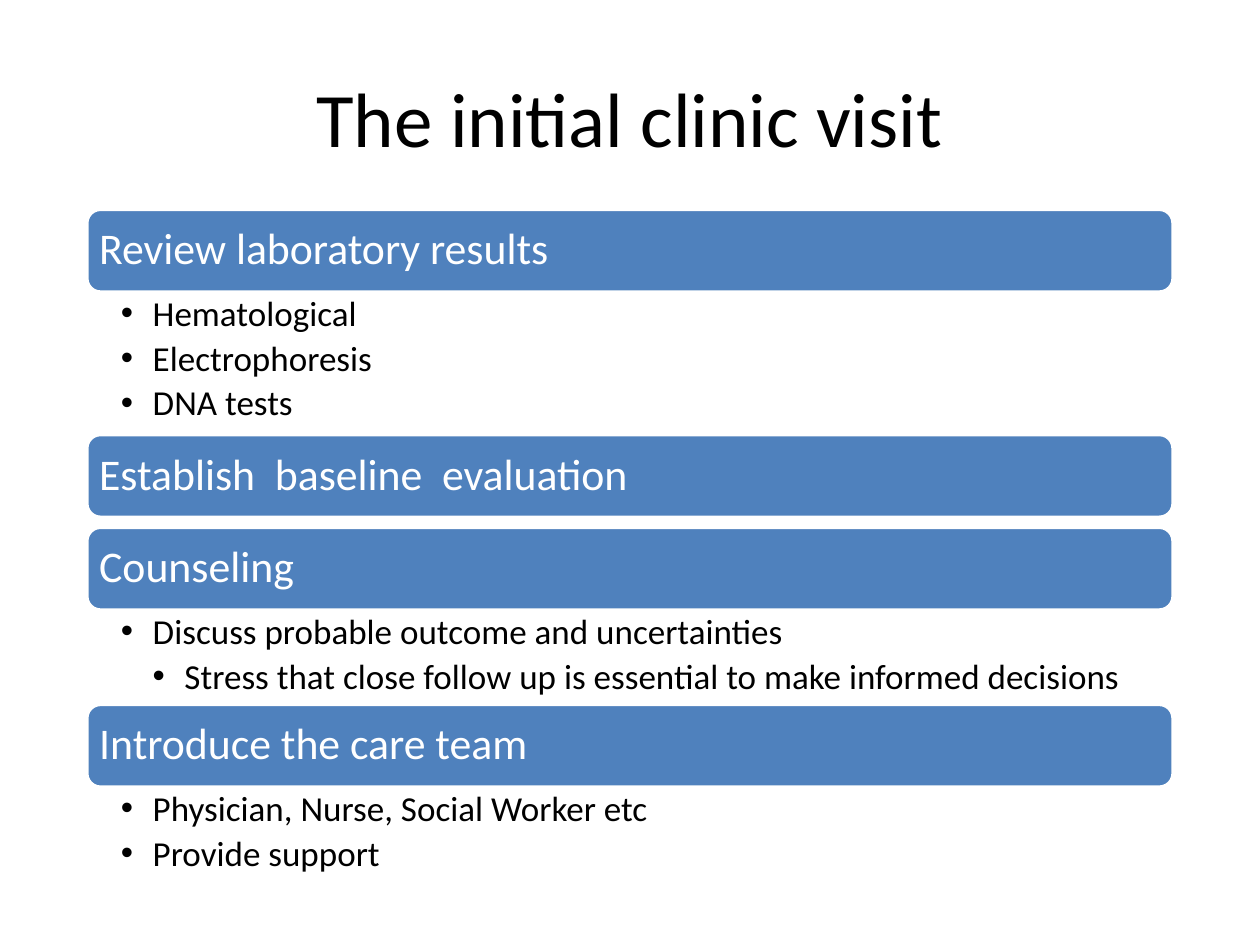
from lxml import etree
from pptx import Presentation
from pptx.dml import color
from pptx.enum import shapes, text
from pptx.oxml import ns
from pptx.util import Cm, Pt

COLORS = {"bar": "4F81BD", "white": "FFFFFF", "black": "000000"}
FONT = "Calibri"
LEFT, TOP, WIDTH = 1.75, 4.22, 21.9
BAR_HEIGHT, BAR_GAP = 1.67, 0.2
BULLET_HEIGHTS = {2: 1.9, 3: 2.87}
INDENT = 0.64

# Heading, then (level, text) for each bullet below it
SECTIONS = [
    ("Review laboratory results",
     [(1, "Hematological"), (1, "Electrophoresis"), (1, "DNA tests")]),
    ("Establish  baseline  evaluation", []),
    ("Counseling",
     [(1, "Discuss probable outcome and uncertainties"),
      (2, "Stress that close follow up is essential to make informed decisions")]),
    ("Introduce the care team",
     [(1, "Physician, Nurse, Social Worker etc"), (1, "Provide support")]),
]


def rgb(name):
    return color.RGBColor.from_string(COLORS[name])


def set_font(para, size, color_name):
    para.font.name = FONT
    para.font.size = Pt(size)
    para.font.color.rgb = rgb(color_name)


def set_frame(frame, anchor, left, top, right, bottom):
    """Wrap the text and set its anchor and its margins in centimetres."""
    frame.word_wrap = True
    frame.vertical_anchor = anchor
    frame.margin_left, frame.margin_top = Cm(left), Cm(top)
    frame.margin_right, frame.margin_bottom = Cm(right), Cm(bottom)


def add_title(page, words):
    box = page.shapes.add_textbox(Cm(1.27), Cm(0.76), Cm(22.86), Cm(3.18))
    set_frame(box.text_frame, text.MSO_ANCHOR.MIDDLE, 0.25, 0.13, 0.25, 0.13)
    para = box.text_frame.paragraphs[0]
    para.text = words
    para.alignment = text.PP_ALIGN.CENTER
    set_font(para, 44, "black")


def add_bar(page, top, words):
    bar = page.shapes.add_shape(shapes.MSO_SHAPE.ROUNDED_RECTANGLE,
                                Cm(LEFT), Cm(top), Cm(WIDTH), Cm(BAR_HEIGHT))
    bar.shadow.inherit = False
    bar.fill.solid()
    bar.fill.fore_color.rgb = rgb("bar")
    bar.line.color.rgb = rgb("white")
    bar.line.width = Pt(2)
    set_frame(bar.text_frame, text.MSO_ANCHOR.MIDDLE, 0.17, 0.17, 0.17, 0.17)
    para = bar.text_frame.paragraphs[0]
    para.text = words
    para.alignment = text.PP_ALIGN.LEFT
    para.line_spacing = 0.9
    set_font(para, 25, "white")


def add_bullet_mark(para, level):
    """Give the paragraph a round bullet with a hanging indent."""
    props = para._p.get_or_add_pPr()
    props.set("marL", str(Cm(INDENT * level)))
    props.set("indent", str(-Cm(INDENT)))
    etree.SubElement(props, ns.qn("a:buFont"), typeface="Arial")
    etree.SubElement(props, ns.qn("a:buChar"), char="•")


def add_bullets(page, top, height, bullets):
    box = page.shapes.add_textbox(Cm(LEFT), Cm(top), Cm(WIDTH), Cm(height))
    frame = box.text_frame
    set_frame(frame, text.MSO_ANCHOR.TOP, 0.69, 0.08, 0.48, 0.08)
    for index, (level, words) in enumerate(bullets):
        para = frame.add_paragraph() if index else frame.paragraphs[0]
        para.text = words
        para.level = level
        para.line_spacing = 0.9
        para.space_after = Pt(4)
        add_bullet_mark(para, level)
        set_font(para, 20, "black")


def main():
    deck = Presentation()
    deck.slide_width, deck.slide_height = Cm(25.4), Cm(19.05)
    page = deck.slides.add_slide(deck.slide_layouts[6])
    add_title(page, "The initial clinic visit")
    top = TOP
    for heading, bullets in SECTIONS:
        add_bar(page, top, heading)
        top += BAR_HEIGHT
        if bullets:
            height = BULLET_HEIGHTS[len(bullets)]
            add_bullets(page, top, height, bullets)
            top += height
        else:
            top += BAR_GAP
    deck.save("out.pptx")


if __name__ == "__main__":
    main()
